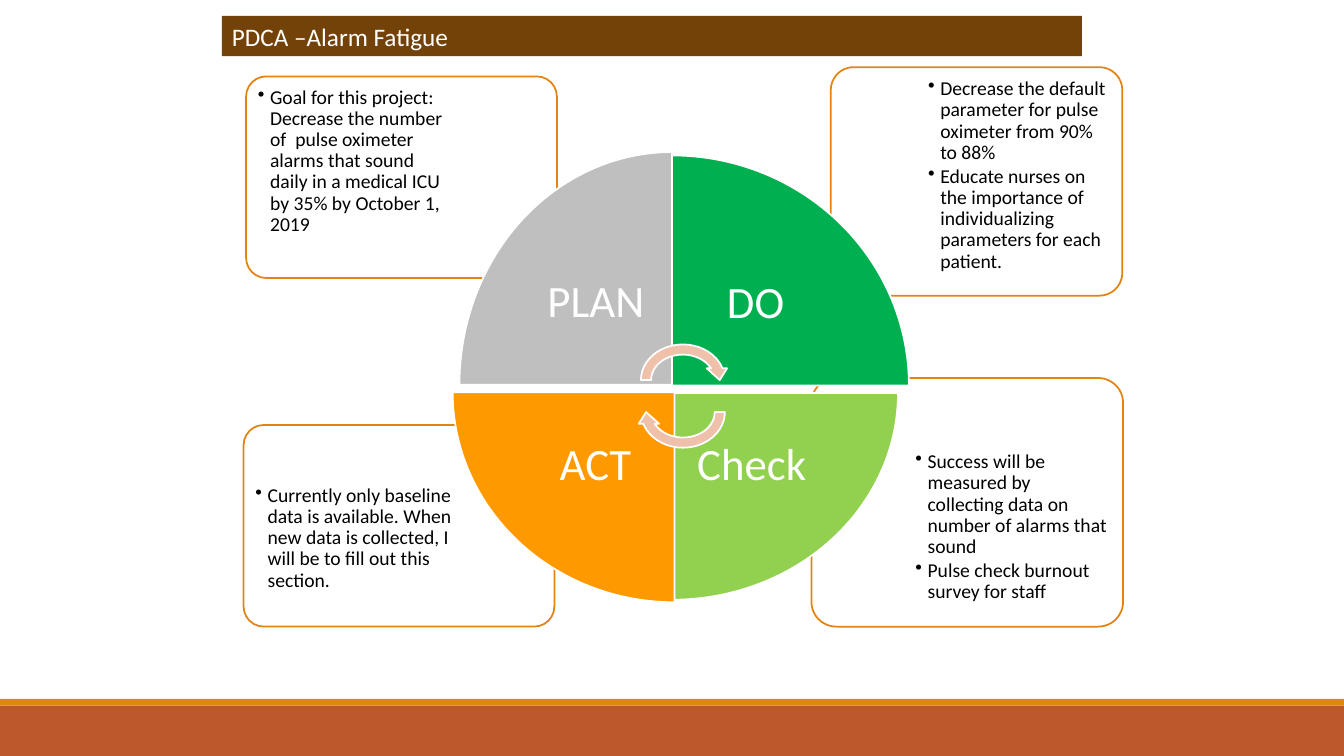
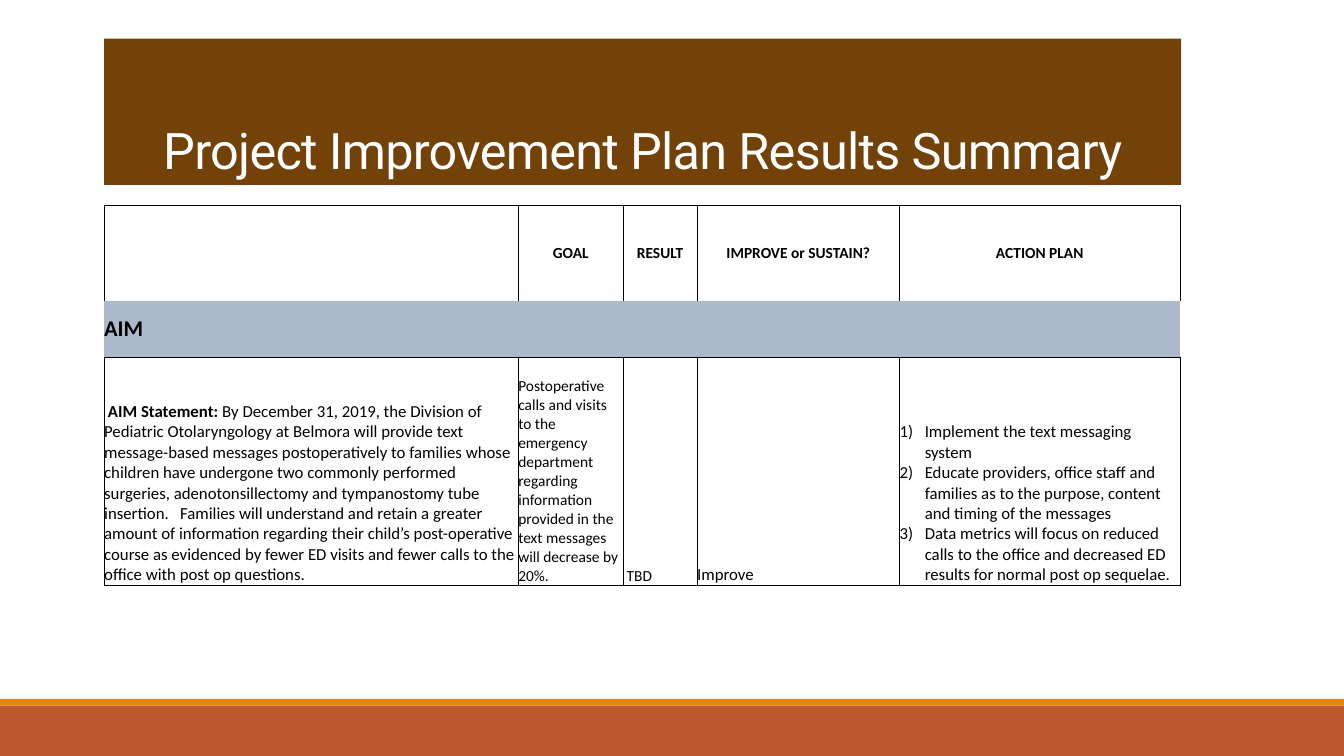
from lxml import etree
from pptx import Presentation
from pptx import util as u
from pptx.dml.color import RGBColor
from pptx.enum import shapes, text
from pptx.oxml.ns import qn

COLS, ROWS = 160, 90
WHITE = RGBColor(0xFF, 0xFF, 0xFF)
BLACK = RGBColor(0x00, 0x00, 0x00)
BROWN = RGBColor(0x72, 0x42, 0x09)
RUST = RGBColor(0xBD, 0x58, 0x2C)
ORANGE = RGBColor(0xE4, 0x83, 0x12)
PEACH = RGBColor(0xEF, 0xC1, 0xAB)
GRAY = RGBColor(0xBF, 0xBF, 0xBF)
GREEN = RGBColor(0x00, 0xB0, 0x50)
LIME = RGBColor(0x92, 0xD0, 0x50)
AMBER = RGBColor(0xFF, 0x99, 0x00)
BLUE_GRAY = RGBColor(0xAC, 0xB9, 0xCA)

SHAPE = shapes.MSO_SHAPE
LEFT, CENTER = text.PP_ALIGN.LEFT, text.PP_ALIGN.CENTER
TOP, MIDDLE, BOTTOM = (text.MSO_ANCHOR.TOP, text.MSO_ANCHOR.MIDDLE,
                       text.MSO_ANCHOR.BOTTOM)
PLAIN_TABLE = "{2D5ABB26-0587-4C30-8999-92F81FD0307C}"


def write(tf, paragraphs, size=14, color=BLACK, bold=False, font="Calibri",
          align=LEFT, line=None, after=None, bullet=None, indent=0, spacing=0):
    """Fill a text frame; a paragraph is a string or a list of (text, bold) runs."""
    for i, runs in enumerate(paragraphs):
        p = tf.add_paragraph() if i else tf.paragraphs[0]
        p.alignment = align
        p.line_spacing = line
        p.space_after = after
        if bullet:
            pPr = p._p.get_or_add_pPr()
            pPr.set("marL", str(u.Inches(indent)))
            pPr.set("indent", str(-u.Inches(indent)))
            if bullet == "1)":
                etree.SubElement(pPr, qn("a:buAutoNum"), type="arabicParenR")
            else:
                etree.SubElement(pPr, qn("a:buChar"), char=bullet)
        for words, heavy in [(runs, bold)] if isinstance(runs, str) else runs:
            r = p.add_run()
            r.text = words
            r.font.name, r.font.size, r.font.bold = font, u.Pt(size), heavy
            r.font.color.rgb = color
            if spacing:
                r._r.get_or_add_rPr().set("spc", str(round(spacing * 100)))


def frame(tf, anchor=TOP, margins=(0, 0, 0, 0)):
    """Set wrapping, anchor and margins (left, top, right, bottom, in inches)."""
    tf.word_wrap = True
    tf.auto_size = text.MSO_AUTO_SIZE.NONE
    tf.vertical_anchor = anchor
    (tf.margin_left, tf.margin_top,
     tf.margin_right, tf.margin_bottom) = map(u.Inches, margins)
    return tf


def set_borders(cell, sides):
    tcPr = cell._tc.get_or_add_tcPr()
    for side in "LRTB":
        if side in sides:
            ln = etree.SubElement(tcPr, qn(f"a:ln{side}"), w=str(u.Pt(0.5)))
            fill = etree.SubElement(ln, qn("a:solidFill"))
            etree.SubElement(fill, qn("a:srgbClr"), val=str(BLACK))


class Deck:
    def __init__(self):
        self.prs = Presentation()
        self.prs.slide_width, self.prs.slide_height = u.Inches(13.33), u.Inches(7.5)
        self.s = None

    def box(self, col, row, cols, rows):
        """Turn grid columns and rows into left, top, width and height."""
        w, h = self.prs.slide_width / COLS, self.prs.slide_height / ROWS
        return [round(v) for v in (col * w, row * h, cols * w, rows * h)]

    def slide(self):
        first = self.s is None
        self.s = self.prs.slides.add_slide(self.prs.slide_layouts[5])
        if first:
            self.master_bands()

    def master_bands(self):
        """Move the two bottom bands to the slide master, behind its placeholders."""
        tree = self.prs.slide_master.shapes.element
        for i, (row, rows, color) in enumerate([(84, 6, RUST), (83.2, 0.8, ORANGE)]):
            band = self.shape(SHAPE.RECTANGLE, (0, row, COLS, rows), color)
            band.element.xpath("./p:nvSpPr/p:cNvPr")[0].set("id", str(101 + i))
            tree.insert(2 + i, band.element)

    def title(self, words, at, margins=(0.1, 0.05, 0.1, 0.05), anchor=MIDDLE, **style):
        sp = self.s.shapes.title
        sp.left, sp.top, sp.width, sp.height = self.box(*at)
        sp.fill.solid()
        sp.fill.fore_color.rgb = BROWN
        write(frame(sp.text_frame, anchor, margins), [words], color=WHITE, **style)

    def shape(self, kind, at, fill, line=None, rotation=0):
        sp = self.s.shapes.add_shape(kind, *self.box(*at))
        sp.shadow.inherit = False
        sp.rotation = rotation
        sp.fill.solid()
        sp.fill.fore_color.rgb = fill
        if line is None:
            sp.line.fill.background()
        else:
            sp.line.color.rgb = line
            sp.line.width = u.Pt(1.25)
        return sp

    def card(self, at, margins, points):
        sp = self.shape(SHAPE.ROUNDED_RECTANGLE, at, WHITE, ORANGE)
        sp.adjustments[0] = 0.1
        write(frame(sp.text_frame, TOP, margins), points, line=0.9,
              after=u.Pt(2), bullet="•", indent=0.12)

    def label(self, words, at):
        sp = self.s.shapes.add_textbox(*self.box(*at))
        write(frame(sp.text_frame, MIDDLE), [words], size=32, color=WHITE,
              align=CENTER, line=0.9)

    def table(self, col, row, widths, heights):
        at = self.box(col, row, sum(widths), sum(heights))
        tb = self.s.shapes.add_table(len(heights), len(widths), *at).table
        tb.first_row = tb.horz_banding = False
        tb._tbl.tblPr.find(qn("a:tableStyleId")).text = PLAIN_TABLE
        for column, cols in zip(tb.columns, widths):
            column.width = self.box(0, 0, cols, 0)[2]
        for line, rows in zip(tb.rows, heights):
            line.height = self.box(0, 0, 0, rows)[3]
        return tb

    def cell(self, cell, paragraphs, sides, anchor=MIDDLE, fill=None, **style):
        set_borders(cell, sides)
        if fill is None:
            cell.fill.background()
        else:
            cell.fill.solid()
            cell.fill.fore_color.rgb = fill
        cell.vertical_anchor = anchor
        cell.margin_left = cell.margin_right = 0
        cell.margin_top = cell.margin_bottom = 0
        write(cell.text_frame, paragraphs, **style)


def pdca_slide(d):
    d.slide()
    d.title("PDCA –Alarm Fatigue", (26.4, 1.9, 102.4, 4.8), size=18)

    outer = 0.06
    cards = [
        ((96.6, 45, 37.1, 29.6), (0.96, 0.66, outer, 0),
         ["Success will be measured by collecting data on number of alarms that sound",
          "Pulse check burnout survey for staff"]),
        ((29, 50.6, 37, 24), (outer, 0.54, 0.95, 0),
         ["Currently only baseline data is available. When new data is collected, "
          "I will be to fill out this section."]),
        ((98.9, 8, 34.7, 27.2), (0.9, 0.05, outer, 0),
         ["Decrease the default parameter for pulse oximeter from 90% to 88%",
          "Educate nurses on the importance of individualizing parameters "
          "for each patient."]),
        ((29.3, 9.1, 37, 24), (outer, 0.05, 0.95, 0),
         ["Goal for this project: Decrease the number of  pulse oximeter alarms "
          "that sound daily in a medical ICU by 35% by October 1, 2019"]),
    ]
    for at, margins, points in cards:
        d.card(at, margins, points)

    quarters = [
        ("PLAN", GRAY, (54.7, 18.1, 25.3, 27.7), (62, 26.3, 17.9, 19.6)),
        ("DO", GREEN, (80.4, 18.1, 27.4, 28.2), (80, 26.5, 19.9, 19.3)),
        ("Check", LIME, (80, 46.8, 26.9, 24.6), (80, 46.8, 19, 17.4)),
        ("ACT", AMBER, (54.6, 46, 25, 26.4), (61.6, 46.7, 18.6, 17.6)),
    ]
    for turn, (words, color, wedge_at, label_at) in enumerate(quarters):
        d.shape(SHAPE.PIE_WEDGE, wedge_at, color, WHITE, rotation=90 * turn)
        d.label(words, label_at)

    for row, rotation in ((40.4, 0), (44.2, 180)):
        d.shape(SHAPE.CIRCULAR_ARROW, (75.7, row, 11.2, 9.7), PEACH, WHITE, rotation)


def results_slide(d):
    d.slide()
    d.title("Project Improvement Plan Results Summary", (12.4, 4.6, 128.2, 17.4),
            anchor=BOTTOM, size=36, font="Roboto", align=CENTER, line=0.85,
            spacing=-0.5)

    tb = d.table(12.4, 24.4, [49.3, 12.5, 8.8, 24.1, 33.4], [11.4, 6.7, 27.2])
    headings = ["", "GOAL", "RESULT", "IMPROVE or SUSTAIN?", "ACTION PLAN"]
    for i, words in enumerate(headings):
        d.cell(tb.cell(0, i), [words], "LRT", size=11, bold=True, align=CENTER)

    tb.cell(1, 0).merge(tb.cell(1, 4))
    d.cell(tb.cell(1, 0), ["AIM"], "B", fill=BLUE_GRAY, size=16, bold=True)

    aim = [(" ", False), ("AIM Statement: ", True),
           ("By December 31, 2019, the Division of Pediatric Otolaryngology at "
            "Belmora will provide text message-based messages postoperatively to "
            "families whose children have undergone two commonly performed "
            "surgeries, adenotonsillectomy and tympanostomy tube insertion.   "
            "Families will understand and retain a greater amount of information "
            "regarding their child’s post-operative course as evidenced by fewer "
            "ED visits and fewer calls to the office with post op questions.", False)]
    goal = ("Postoperative calls and visits to the emergency department regarding "
            "information provided in the text messages will decrease by 20%.")
    actions = ["Implement the text messaging system",
               "Educate providers, office staff and families as to the purpose, "
               "content and timing of the messages",
               "Data metrics will focus on reduced calls to the office and decreased "
               "ED results for normal post op sequelae."]
    results = [([aim], dict(size=12)), ([goal], dict(size=11)),
               ([" TBD"], dict(size=11)), (["Improve"], dict(size=12)),
               (actions, dict(size=12, bullet="1)", indent=0.25))]
    for i, (paragraphs, style) in enumerate(results):
        d.cell(tb.cell(2, i), paragraphs, "LRTB", anchor=BOTTOM, **style)


def main():
    d = Deck()
    pdca_slide(d)
    results_slide(d)
    d.prs.save("out.pptx")


if __name__ == "__main__":
    main()
